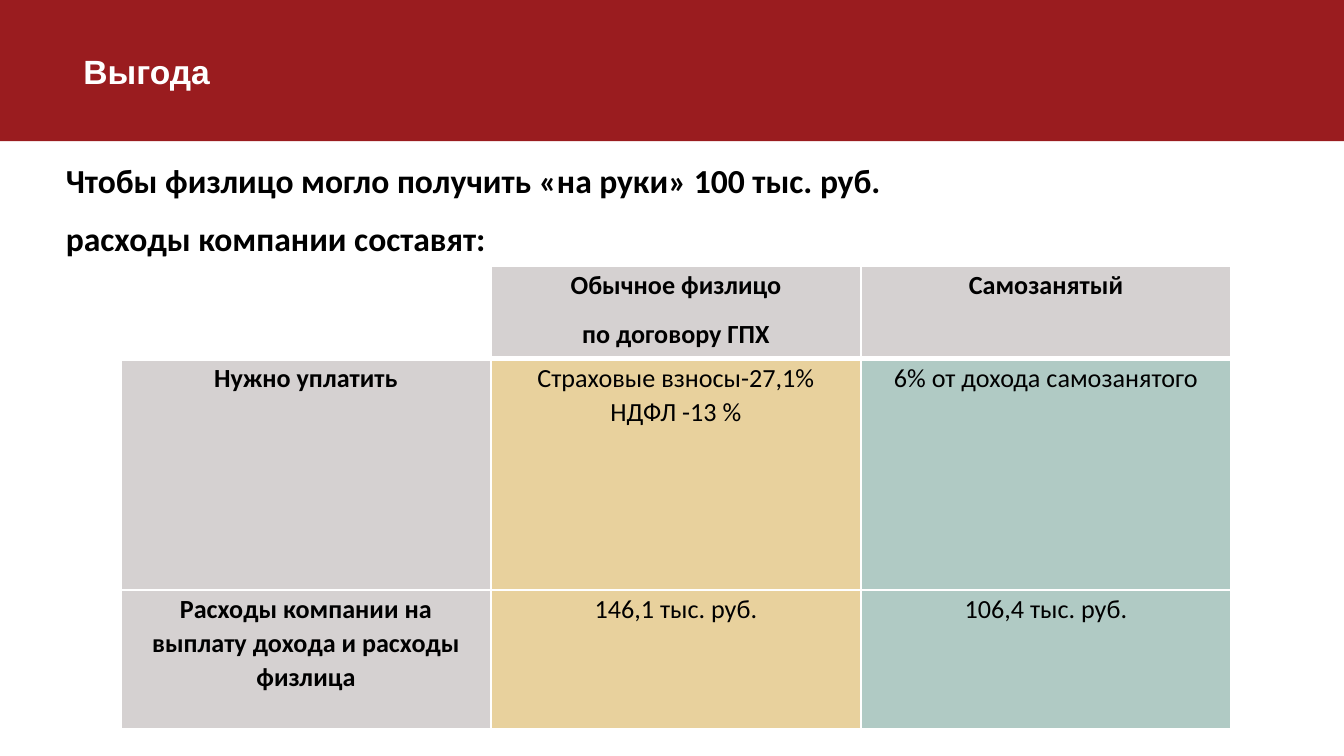
from dataclasses import dataclass

from lxml import etree
from pptx import Presentation
from pptx.dml.color import RGBColor
from pptx.enum.shapes import MSO_SHAPE as SHAPE
from pptx.enum.text import MSO_ANCHOR as ANCHOR, MSO_AUTO_SIZE as AUTO, PP_ALIGN as ALIGN
from pptx.oxml.ns import qn
from pptx.util import Inches, Pt


@dataclass(frozen=True)
class Theme:
    red: str = "9A1C1F"
    white: str = "FFFFFF"
    black: str = "000000"
    grey: str = "D5D1D1"
    sand: str = "E8D19D"
    mint: str = "B0CAC4"
    title_font: str = "Arial"
    body_font: str = "Calibri"
    heading: int = 18
    cell: int = 14
    line_spacing: float = 1.07
    gap: int = 8


T = Theme()

SLIDE_WIDTH = 10
SLIDE_HEIGHT = SLIDE_WIDTH * 9 / 16
LEAD = ["Чтобы физлицо могло получить «на руки» 100 тыс. руб.", "расходы компании составят:"]
ROWS = [
    ["", "Обычное физлицо\nпо договору ГПХ", "Самозанятый"],
    ["Нужно уплатить", "Страховые взносы-27,1%\vНДФЛ -13 %", "6% от дохода самозанятого"],
    ["Расходы компании на\vвыплату дохода и расходы физлица", "146,1 тыс. руб.", "106,4 тыс. руб."],
]
ROW_HEIGHTS = [0.69, 1.72, 1.03]
TABLE_WIDTH = 8.26


def set_attrs(obj, values):
    for name, value in values.items():
        setattr(obj, name, value)


def place(sp, left, top, width, height):
    box = dict(left=left, top=top, width=width, height=height)
    set_attrs(sp, {name: Inches(value) for name, value in box.items()})


def set_fill(obj, color):
    obj.fill.solid()
    obj.fill.fore_color.rgb = RGBColor.from_string(color)


def format_text(tf, name, size, color, bold=True, **para):
    for p in tf.paragraphs:
        set_attrs(p, para)
        for r in p.runs:
            set_attrs(r.font, dict(name=name, size=Pt(size), bold=bold))
            r.font.color.rgb = RGBColor.from_string(color)


def add_band(slide, width, height):
    sp = slide.shapes.add_shape(SHAPE.RECTANGLE, 0, 0, Inches(width), Inches(height))
    sp.shadow.inherit = False
    set_fill(sp, T.red)
    sp.line.fill.background()
    slide.shapes._spTree.insert(2, sp._element)


def fill_title(sp, text):
    place(sp, 0.52, 0.33, 2.32, 0.4)
    tf = sp.text_frame
    tf.text = text
    set_attrs(tf, dict(word_wrap=True, auto_size=AUTO.NONE, vertical_anchor=ANCHOR.MIDDLE))
    format_text(tf, T.title_font, T.heading, T.white, alignment=ALIGN.LEFT)


def fill_body(sp, lines):
    place(sp, 0.44, 1.12, 9.23, 0.85)
    tf = sp.text_frame
    tf.text = "\n".join(lines)
    inset = Inches(0.05)
    set_attrs(tf, dict(word_wrap=True, auto_size=AUTO.NONE, vertical_anchor=ANCHOR.TOP,
                       margin_left=inset, margin_top=inset,
                       margin_right=inset, margin_bottom=inset))
    format_text(tf, T.body_font, T.heading, T.black, alignment=ALIGN.LEFT,
                line_spacing=T.line_spacing, space_before=Pt(T.gap))
    for p in tf.paragraphs:
        pPr = p._p.get_or_add_pPr()
        pPr.set("marL", "0")
        pPr.set("indent", "0")
        etree.SubElement(pPr, qn("a:buNone"))


def set_borders(cell, widths):
    tcPr = cell._tc.get_or_add_tcPr()
    for side, width in widths.items():
        ln = etree.SubElement(tcPr, qn(f"a:ln{side}"), w=str(Pt(width)))
        fill = etree.SubElement(ln, qn("a:solidFill"))
        etree.SubElement(fill, qn("a:srgbClr"), val=T.white)


def cell_color(row, col):
    if row == col == 0:
        return T.white
    if row == 0 or col == 0:
        return T.grey
    return T.sand if col == 1 else T.mint


def fill_cell(cell, text, row, col):
    set_borders(cell, {"L": 1, "R": 1, "T": 3 if row == 1 else 1, "B": 3 if row == 0 else 1})
    set_fill(cell, cell_color(row, col))
    inset = Inches(0.01)
    set_attrs(cell, dict(margin_left=inset, margin_right=inset, margin_top=inset,
                         margin_bottom=0, vertical_anchor=ANCHOR.TOP))
    cell.text_frame.text = text
    format_text(cell.text_frame, T.body_font, T.cell, T.black, bold=row == 0 or col == 0,
                alignment=ALIGN.CENTER, line_spacing=T.line_spacing,
                space_after=Pt(T.gap))


def add_cost_table(slide, left, top):
    cols = len(ROWS[0])
    frame = slide.shapes.add_table(len(ROWS), cols, Inches(left), Inches(top),
                                   Inches(TABLE_WIDTH), Inches(sum(ROW_HEIGHTS)))
    table = frame.table
    set_attrs(table, dict(first_row=False, horz_banding=False))
    for i, (texts, height) in enumerate(zip(ROWS, ROW_HEIGHTS)):
        table.rows[i].height = Inches(height)
        for j, text in enumerate(texts):
            fill_cell(table.cell(i, j), text, i, j)


def main():
    prs = Presentation()
    set_attrs(prs, dict(slide_width=Inches(SLIDE_WIDTH), slide_height=Inches(SLIDE_HEIGHT)))
    slide = prs.slides.add_slide(prs.slide_layouts[1])
    add_band(slide, SLIDE_WIDTH, 1.05)
    fill_title(slide.shapes.title, "Выгода")
    fill_body(slide.placeholders[1], LEAD)
    add_cost_table(slide, 0.9, 1.98)
    prs.save("out.pptx")


if __name__ == "__main__":
    main()
